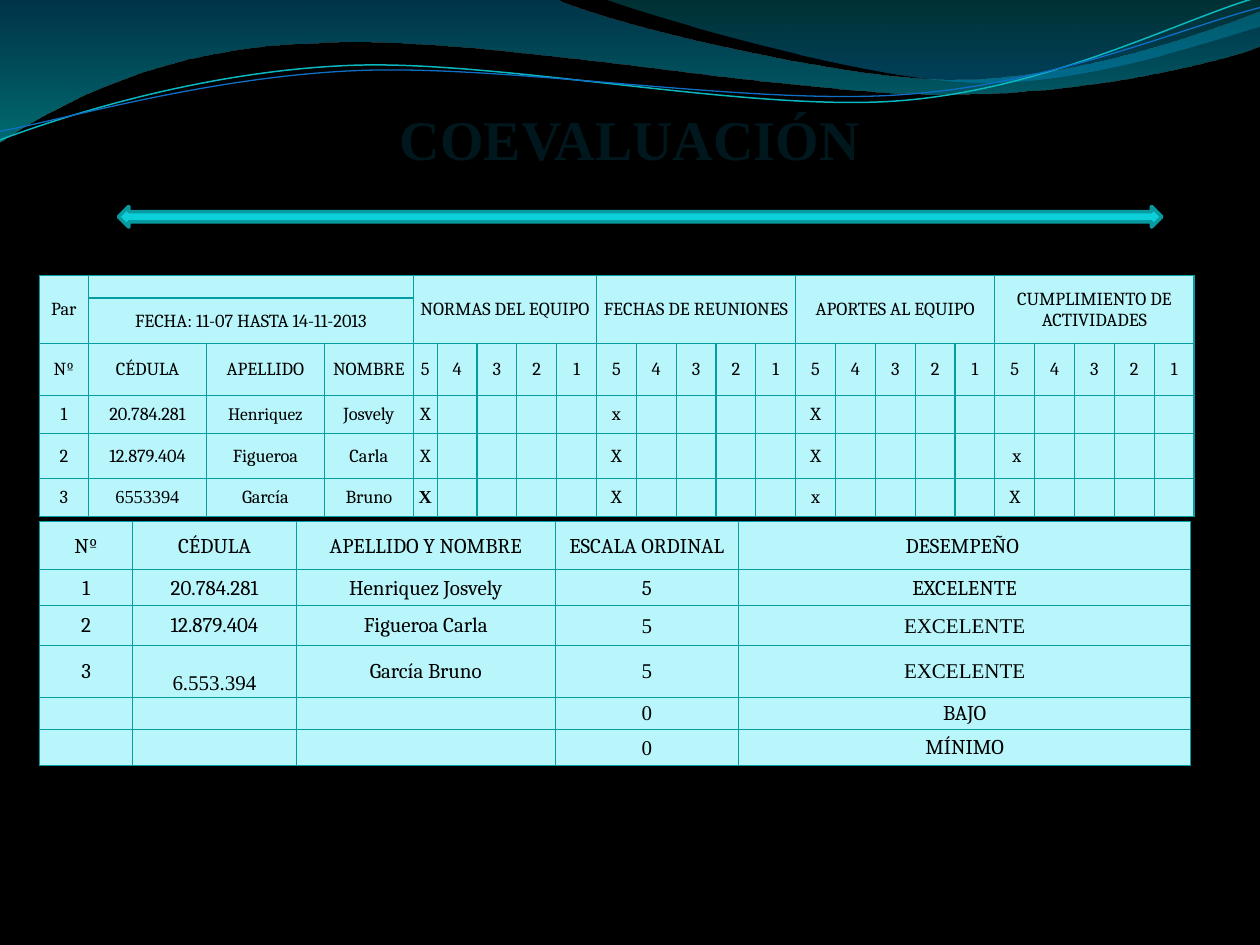
from dataclasses import dataclass
from lxml import etree
from pptx import Presentation, util as u
from pptx.dml.color import RGBColor
from pptx.enum import shapes, text
from pptx.oxml import parse_xml
from pptx.oxml.ns import nsdecls, qn

SERIF = "Times New Roman"


@dataclass(frozen=True)
class Theme:
    font: str = "Cambria"
    bg: str = "000000"
    ink: str = "000000"
    title: str = "00171D"
    arrow: str = "0BD0D9"
    arrow_line: str = "089AA1"
    cell: str = "B9F6FC"
    border: str = "069CA3"
    teal_line: str = "0AB8BF"
    blue_line: str = "0F6FC6"
    title_size: float = 32
    score_size: float = 10.5
    name_size: float = 10
    result_size: float = 12
    empty_size: float = 8


def rgb(value):
    return RGBColor.from_string(value)


def write(tf, words, *, size, font, color, bold=False):
    p = tf.paragraphs[0]
    p.alignment = text.PP_ALIGN.CENTER
    r = p.add_run()
    r.text = words
    r.font.size, r.font.name, r.font.bold = u.Pt(size), font, bold
    r.font.color.rgb = rgb(color)


class Deck:
    def __init__(self, theme):
        self.th = theme
        self.prs = Presentation()
        self.prs.slide_width, self.prs.slide_height = u.Pt(720), u.Pt(540)
        self.s = self.prs.slides.add_slide(self.prs.slide_layouts[5])
        fill = self.s.background.fill
        fill.solid()
        fill.fore_color.rgb = rgb(theme.bg)

    def title(self, words, x, y, w, h):
        sp = self.s.shapes.title
        sp.left, sp.top, sp.width, sp.height = map(u.Pt, (x, y, w, h))
        sp.text_frame.vertical_anchor = text.MSO_ANCHOR.MIDDLE
        write(sp.text_frame, words, size=self.th.title_size, font=SERIF,
              color=self.th.title, bold=True)

    def curve(self, segments, closed):
        """Two numbers are a line's end; six are a cubic curve's control points and end."""
        points = [tuple(round(v * 10) for v in seg[i:i + 2])
                  for seg in segments for i in range(0, len(seg), 2)]
        fb = self.s.shapes.build_freeform(*points[0], scale=u.Pt(0.1))
        fb.add_line_segments(points[1:], close=closed)
        sp = fb.convert_to_shape()
        sp.shadow.inherit = False
        lines = iter(list(sp.element.iter(qn("a:lnTo"))))
        for seg in segments[1:]:
            first = next(lines)
            if len(seg) == 6:
                bez = etree.Element(qn("a:cubicBezTo"))
                first.addprevious(bez)
                for ln in (first, next(lines), next(lines)):
                    bez.append(ln[0])
                    ln.getparent().remove(ln)
        return sp

    def wave(self, segments, stops):
        sp = self.curve(segments, True)
        sp.line.fill.background()
        gs = "".join(f'<a:gs pos="{pos * 1000}"><a:srgbClr val="{color}">'
                     f'<a:alpha val="{alpha * 1000}"/></a:srgbClr></a:gs>'
                     for pos, color, alpha in stops)
        grad = parse_xml(f'<a:gradFill {nsdecls("a")} rotWithShape="1"><a:gsLst>{gs}</a:gsLst>'
                         '<a:lin ang="5400000" scaled="0"/></a:gradFill>')
        sp.element.spPr.find(qn("a:custGeom")).addnext(grad)

    def stroke(self, segments, color, width):
        sp = self.curve(segments, False)
        sp.rotation = 357.3
        sp.fill.background()
        sp.line.color.rgb, sp.line.width = rgb(color), u.Pt(width)

    def arrow(self, x, y, w, h):
        sp = self.s.shapes.add_shape(shapes.MSO_SHAPE.LEFT_RIGHT_ARROW, *map(u.Pt, (x, y, w, h)))
        sp.shadow.inherit = False
        sp.fill.solid()
        sp.fill.fore_color.rgb = rgb(self.th.arrow)
        sp.line.color.rgb, sp.line.width = rgb(self.th.arrow_line), u.Pt(2)

    def style_cell(self, cell, words, **fmt):
        cell.vertical_anchor = text.MSO_ANCHOR.MIDDLE
        cell.margin_left = cell.margin_right = cell.margin_top = u.Pt(0.5)
        cell.margin_bottom = 0
        tc_pr = cell._tc.get_or_add_tcPr()
        for side in "LRTB":
            tc_pr.append(parse_xml(
                f'<a:ln{side} {nsdecls("a")} w="{u.Pt(0.75)}"><a:solidFill>'
                f'<a:srgbClr val="{self.th.border}"/></a:solidFill></a:ln{side}>'))
        cell.fill.solid()
        cell.fill.fore_color.rgb = rgb(self.th.cell)
        if words:
            write(cell.text_frame, words, color=self.th.ink, **fmt)
        else:
            cell.text_frame.paragraphs[0]._p.append(parse_xml(
                f'<a:endParaRPr {nsdecls("a")} sz="{self.th.empty_size * 100}"/>'))

    def table(self, x, y, cols, heights, rows, size, merges=(), formats=None):
        frame = self.s.shapes.add_table(len(heights), len(cols), u.Pt(x), u.Pt(y),
                                        u.Pt(sum(cols)), u.Pt(sum(heights)))
        tbl = frame.table
        tbl.first_row = tbl.horz_banding = False
        for col, w in zip(tbl.columns, cols):
            col.width = u.Pt(w)
        for row, h in zip(tbl.rows, heights):
            row.height = u.Pt(h)
        for i, row in enumerate(rows):
            for j, words in enumerate(row):
                fmt = {"size": size, "font": self.th.font, **(formats or {}).get((i, j), {})}
                self.style_cell(tbl.cell(i, j), words, **fmt)
        for r1, c1, r2, c2 in merges:
            tbl.cell(r1, c1).merge(tbl.cell(r2, c2))
        return tbl


def score_row(number, card, surname, name, marks):
    """Each criterion takes five columns and shows its mark in the first."""
    return [number, card, surname, name] + [c for m in marks for c in [m] + [""] * 4]


def main():
    th = Theme()
    d = Deck(th)

    # Waves across the top
    d.wave([(0, 0), (316.8, -0.7), (342.7, 12.2, 478.1, 45.4, 545.8, 45.4),
            (614.2, 45.4, 689.8, 18.7, 720, 6.5), (720.7, 25.9),
            (709.2, 31.7, 626.4, 54.7, 537.1, 54), (447.8, 54, 275, 20.2, 185, 24.5),
            (92.2, 25.9, 33.1, 59.8, -0.7, 81.4)],
           [(0, "0074A1", 45), (100, "00C6CF", 55)])
    d.wave([(344.9, -0.7), (366.5, 7.9, 491, 44.6, 553.7, 46.8),
            (616.3, 49.7, 691.9, 23, 720, 15.1), (720, 0)],
           [(0, "00A1A9", 30), (80, "008BBF", 45)])
    d.stroke([(-1.4, 63), (33.8, 51.7, 114.1, 29.4, 199.8, 29.9),
              (284.8, 30.3, 425.8, 67.3, 512.4, 64.9),
              (599, 62.4, 676.4, 25.7, 720.2, 15.5)], th.teal_line, 0.85)
    d.stroke([(-1.1, 58), (32.9, 53.8, 118.3, 32.5, 204.1, 33),
              (290.6, 33.4, 428.9, 63.8, 515.5, 61.4),
              (601.3, 59.6, 678.4, 30.1, 721.4, 21.3)], th.blue_line, 0.75)

    # Title and double arrow
    d.title("COEVALUACIÓN", 36, 53.7, 648, 50)
    d.arrow(67.7, 118, 596.2, 11.8)

    # Scores by criterion
    criteria = ["NORMAS DEL EQUIPO", "FECHAS DE REUNIONES", "APORTES AL EQUIPO",
                "CUMPLIMIENTO DE ACTIVIDADES"]
    scores = [
        score_row("Par", "", "", "", criteria),
        ["", "FECHA: 11-07 HASTA 14-11-2013"] + [""] * 22,
        ["Nº", "CÉDULA", "APELLIDO", "NOMBRE"] + list("54321") * 4,
        score_row("1", "20.784.281", "Henriquez", "Josvely", ["X", "x", "X", ""]),
        score_row("2", "12.879.404", "Figueroa", "Carla", ["X", "X", "X", " x"]),
        score_row("3", "6553394", "García", "Bruno", ["X", "X", "x", "X"]),
    ]
    merges = [(0, 0, 1, 0), (0, 1, 0, 3), (1, 1, 1, 3)]
    merges += [(0, c, 1, c + 4) for c in range(4, 24, 5)]
    d.table(22.4, 157.4, [28.2, 67.4, 67.4, 50.9, 13.6] + [22.77] * 19,
            [12.9, 26, 29.8, 21.5, 25.7, 21.7], scores, th.score_size, merges,
            {(3, 2): {"size": th.name_size}, (5, 1): {"font": SERIF},
             (5, 4): {"font": SERIF, "bold": True}})

    # Final results
    results = [
        ["Nº", "CÉDULA", "APELLIDO Y NOMBRE", "ESCALA ORDINAL", "DESEMPEÑO "],
        ["1", "20.784.281", "Henriquez Josvely", "5", "EXCELENTE"],
        ["2", "12.879.404", "Figueroa Carla", "5", "EXCELENTE"],
        ["3", "6.553.394", "García Bruno", "5", "EXCELENTE"],
        ["", "", "", "0", "BAJO"],
        ["", "", "", "0", "MÍNIMO"],
    ]
    serif_cells = [(3, 1), (2, 4), (3, 4)] + [(i, 3) for i in range(2, 6)]
    tbl = d.table(22.5, 298.2, [53.4, 93.4, 148.1, 104.6, 258.6],
                  [27.4, 20.6, 22.6, 29.7, 18.3, 20.9], results, th.result_size,
                  formats={at: {"font": SERIF} for at in serif_cells})
    tbl.cell(3, 1).margin_top = u.Pt(14)

    d.prs.save("out.pptx")


if __name__ == "__main__":
    main()
